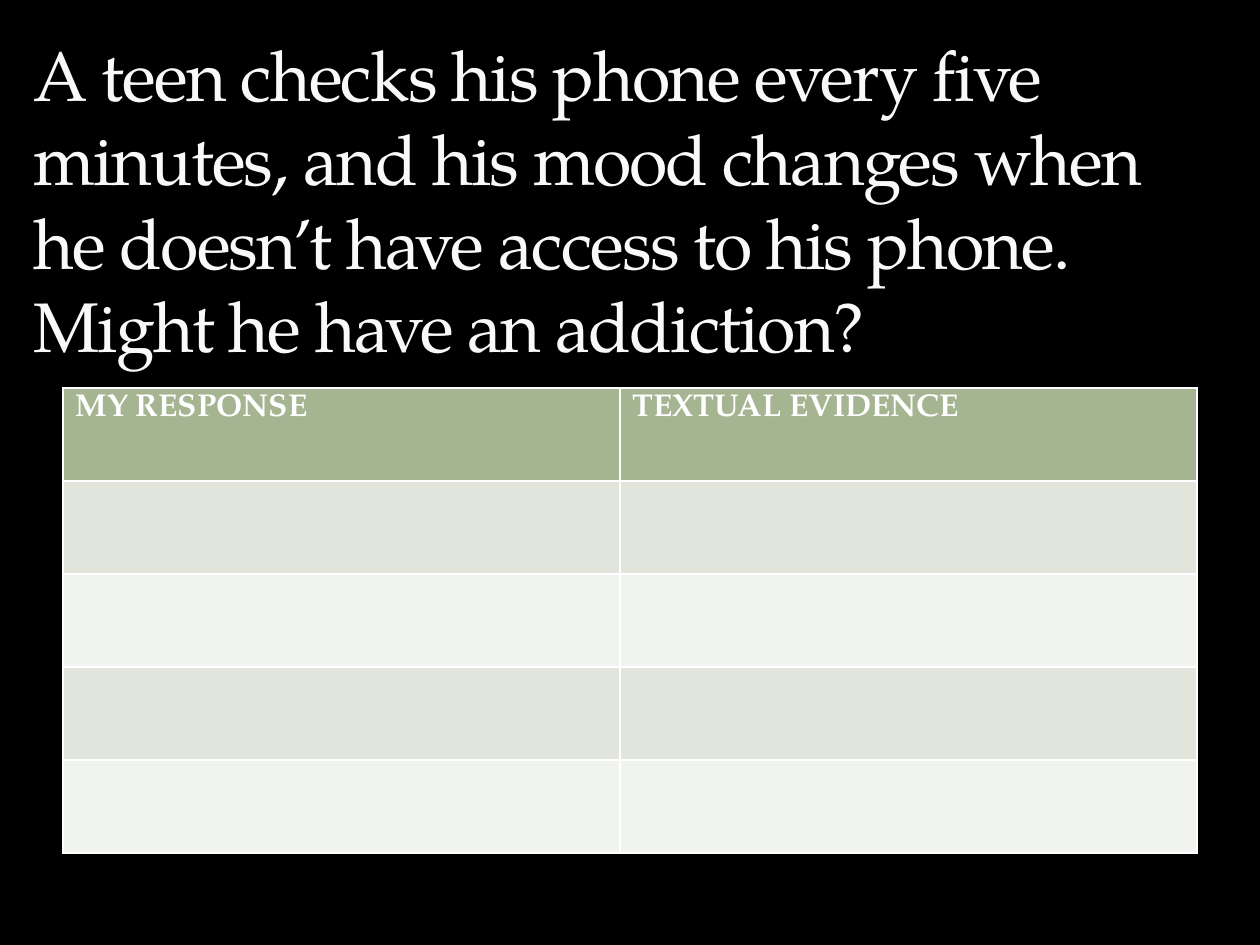
from pptx import Presentation
from pptx.dml.color import RGBColor
from pptx.enum.text import MSO_ANCHOR
from pptx.util import Emu, Pt

PX = 914400 // 126
FONT = "TeX Gyre Pagella"
BOTTOM = MSO_ANCHOR.BOTTOM

BLACK = RGBColor(0x00, 0x00, 0x00)
WHITE = RGBColor(0xFF, 0xFF, 0xFF)
OFF_WHITE = RGBColor(0xF9, 0xF9, 0xF9)
HEADER_GREEN = RGBColor(0xA5, 0xB5, 0x92)
BANDS = [RGBColor(0xE1, 0xE5, 0xDC), RGBColor(0xF0, 0xF3, 0xEE)]

HEADINGS = ["MY RESPONSE", "TEXTUAL EVIDENCE"]
COLUMN_WIDTHS = [557, 577]
ROW_COUNT, ROW_HEIGHT = 5, 93


def px(length):
    return Emu(length * PX)


prs = Presentation()
prs.slide_width, prs.slide_height = px(1260), px(945)
slide = prs.slides.add_slide(prs.slide_layouts[6])
slide.background.fill.solid()
slide.background.fill.fore_color.rgb = BLACK

# Question, growing upwards from just above the table
question = slide.shapes.add_textbox(px(21), px(168), px(1197), px(199)).text_frame
question.word_wrap = True
question.vertical_anchor = BOTTOM
question.margin_bottom = 0
sentence = question.paragraphs[0]
sentence.text = (
    "A teen checks his phone every five minutes, and his mood changes "
    "when he doesn’t have access to his phone. Might he have an addiction?"
)
sentence.font.name = FONT
sentence.font.size = Pt(40)
sentence.font.color.rgb = OFF_WHITE
sentence.runs[0].font._element.set("spc", "-100")

# Answer table: the default style supplies the white rules
answers = slide.shapes.add_table(
    ROW_COUNT, len(HEADINGS), px(63), px(388),
    px(sum(COLUMN_WIDTHS)), px(ROW_COUNT * ROW_HEIGHT),
).table
for column, width in zip(answers.columns, COLUMN_WIDTHS):
    column.width = px(width)

for r, row in enumerate(answers.rows):
    row.height = px(ROW_HEIGHT)
    for cell in row.cells:
        cell.fill.solid()
        cell.fill.fore_color.rgb = BANDS[(r - 1) % 2] if r else HEADER_GREEN

for cell, heading in zip(answers.rows[0].cells, HEADINGS):
    cell.text = heading
    font = cell.text_frame.paragraphs[0].font
    font.name = FONT
    font.size = Pt(18)
    font.bold = True
    font.color.rgb = WHITE

prs.save("out.pptx")
